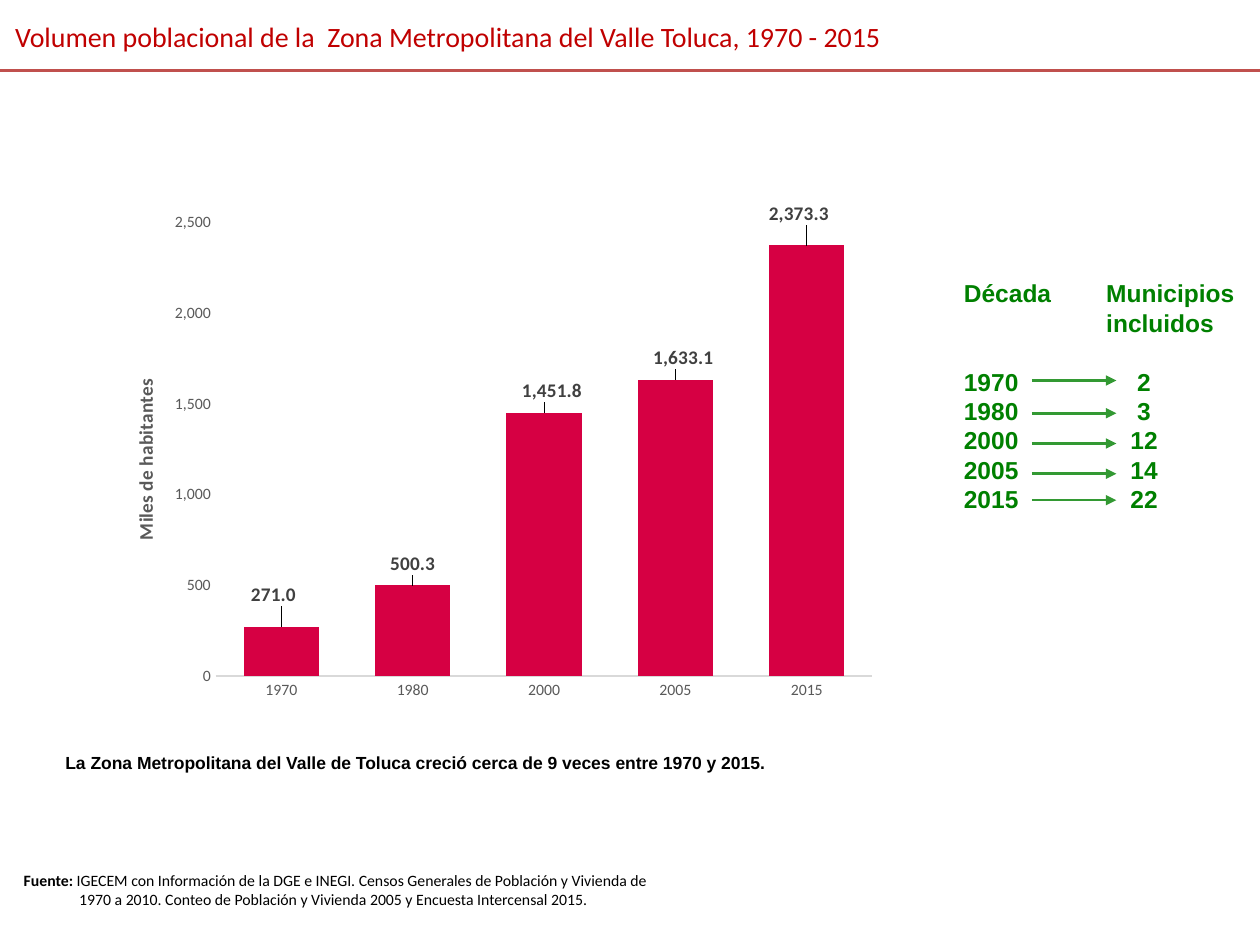
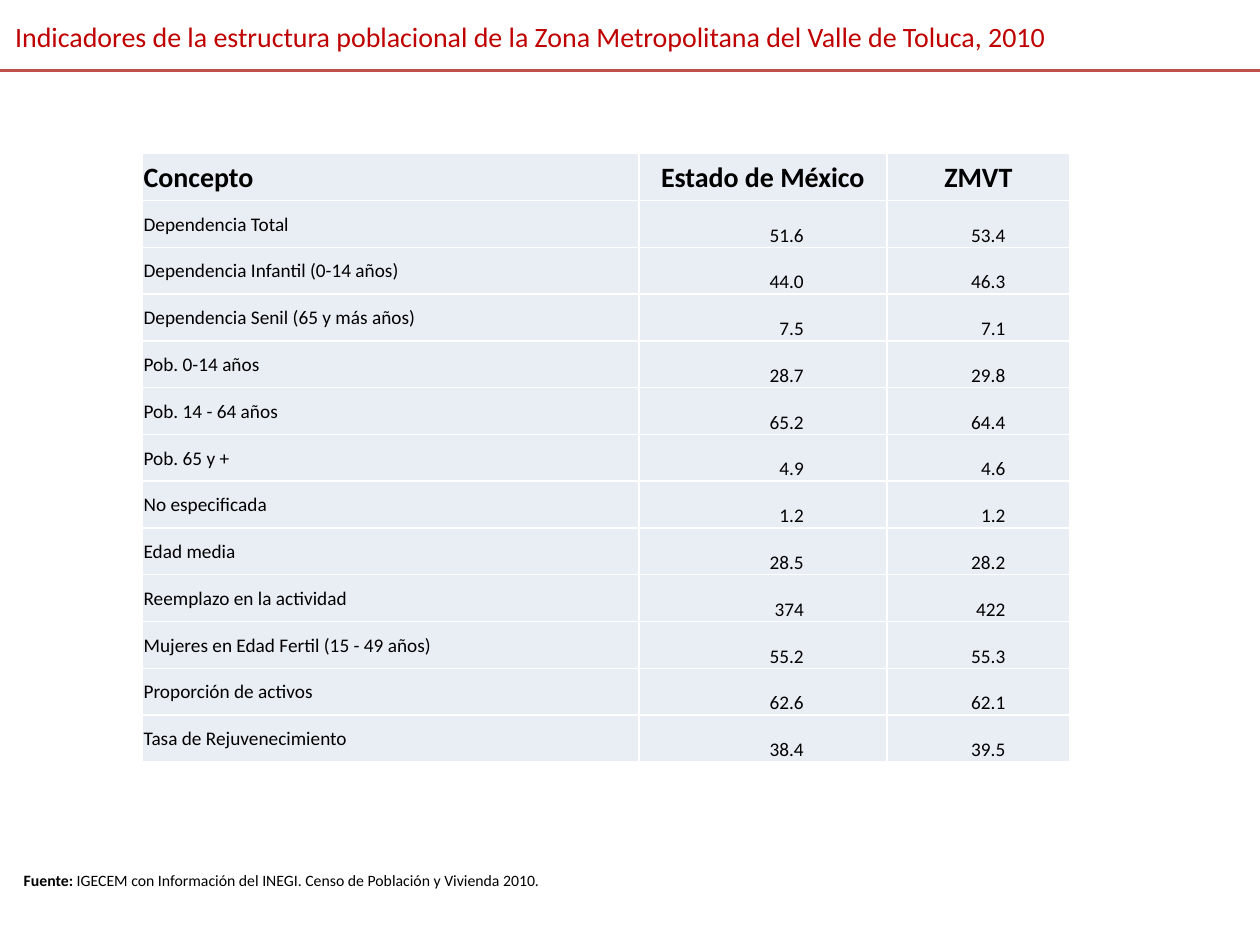
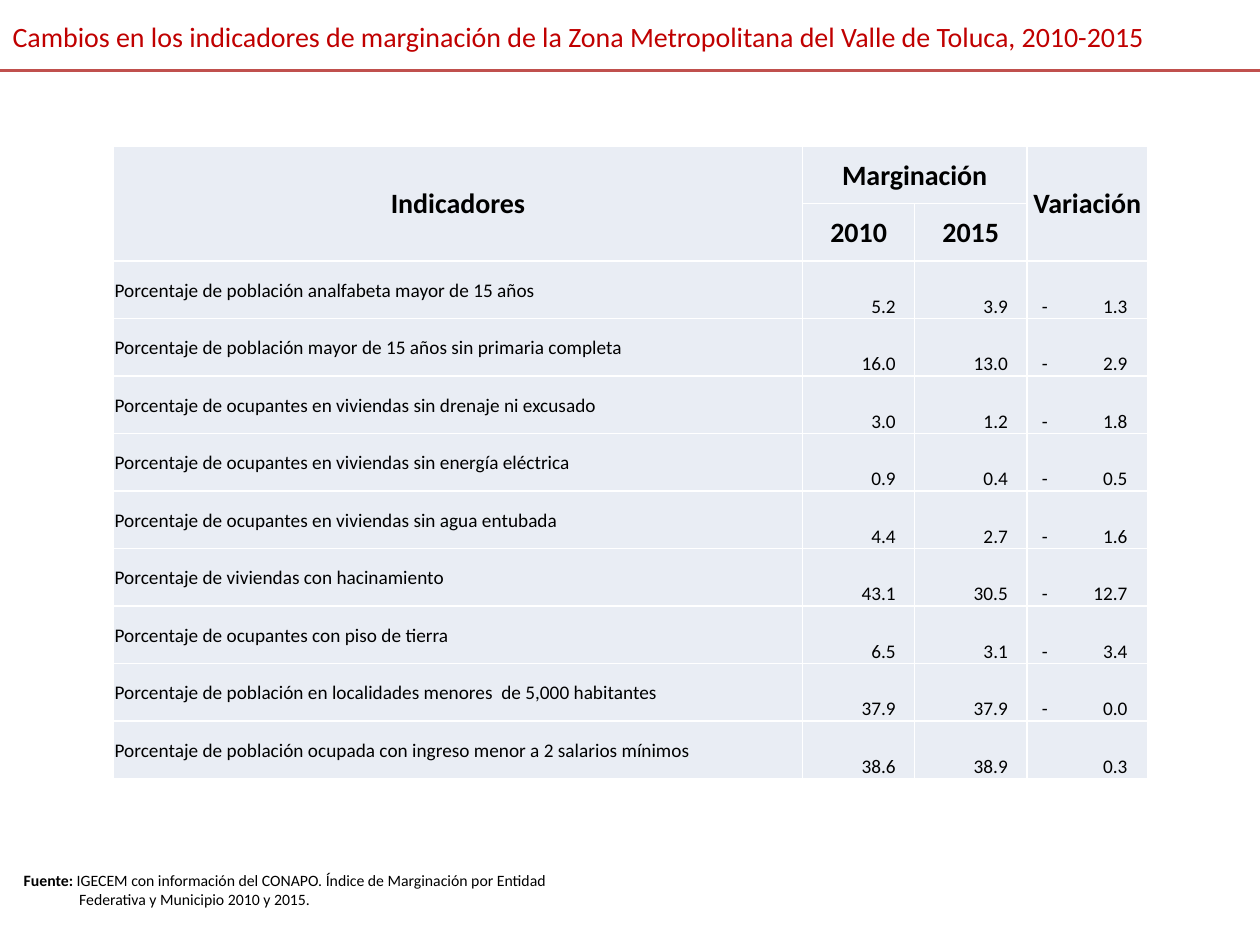
from lxml import etree
from pptx import Presentation
from pptx.chart.data import CategoryChartData
from pptx.dml.color import RGBColor
from pptx.enum.chart import XL_CHART_TYPE, XL_LABEL_POSITION, XL_TICK_MARK
from pptx.enum.shapes import MSO_CONNECTOR
from pptx.enum.text import MSO_ANCHOR, MSO_AUTO_SIZE, PP_ALIGN
from pptx.oxml.ns import qn
from pptx.util import Inches, Pt

COLUMN_CLUSTERED = XL_CHART_TYPE.COLUMN_CLUSTERED
OUTSIDE_END = XL_LABEL_POSITION.OUTSIDE_END
NO_TICK = XL_TICK_MARK.NONE
STRAIGHT = MSO_CONNECTOR.STRAIGHT
TOP, MIDDLE, BOTTOM = MSO_ANCHOR.TOP, MSO_ANCHOR.MIDDLE, MSO_ANCHOR.BOTTOM
NO_AUTOFIT = MSO_AUTO_SIZE.NONE
LEFT, CENTER, RIGHT = PP_ALIGN.LEFT, PP_ALIGN.CENTER, PP_ALIGN.RIGHT

TITLE_RED = RGBColor(0xC0, 0x00, 0x00)
RULE_RED = RGBColor(0xC0, 0x50, 0x4D)
BAR_RED = RGBColor(0xD6, 0x00, 0x43)
LIST_GREEN = RGBColor(0x00, 0x80, 0x00)
ARROW_GREEN = RGBColor(0x33, 0x99, 0x33)
BLACK = RGBColor(0x00, 0x00, 0x00)
LABEL_GRAY = RGBColor(0x40, 0x40, 0x40)
AXIS_GRAY = RGBColor(0x59, 0x59, 0x59)
AXIS_LINE_GRAY = RGBColor(0xD9, 0xD9, 0xD9)
CELL_FILL = RGBColor(0xE9, 0xED, 0xF4)

HEADINGS = [
    # title, title left, source, source width
    ("Volumen poblacional de la  Zona Metropolitana del Valle Toluca, 1970 - 2015", 0.02,
     " IGECEM con Información de la DGE e INEGI. Censos Generales de Población y Vivienda de "
     "1970 a 2010. Conteo de Población y Vivienda 2005 y Encuesta Intercensal 2015.", 5.14),
    ("Indicadores de la estructura poblacional de la Zona Metropolitana del Valle de Toluca, 2010",
     0.02, " IGECEM con Información del INEGI. Censo de Población y Vivienda 2010.", 4.73),
    ("Cambios en los indicadores de marginación de la Zona Metropolitana del Valle de Toluca, "
     "2010-2015", 0,
     " IGECEM con información del CONAPO. Índice de Marginación por Entidad "
     "Federativa y Municipio 2010 y 2015.", 4.73),
]

POPULATION = {"1970": 271.0, "1980": 500.3, "2000": 1451.8, "2005": 1633.1, "2015": 2373.3}
LABEL_SHIFTS = [(-0.01, -0.03), (0, -0.01), (0.01, -0.01), (0.01, -0.01), (-0.01, -0.03)]
ARROW_HEIGHTS = [3.02, 3.28, 3.52, 3.76, 3.97]
MUNICIPALITIES = ["Década\tMunicipios", "\tincluidos",
                  "1970\t2", "1980\t3", "2000\t12", "2005\t14", "2015\t22"]

STRUCTURE_ROWS = [
    ("Concepto", "Estado de México", "ZMVT"),
    ("Dependencia Total", "51.6", "53.4"),
    ("Dependencia Infantil (0-14 años)", "44.0", "46.3"),
    ("Dependencia Senil (65 y más años)", "7.5", "7.1"),
    ("Pob. 0-14 años", "28.7", "29.8"),
    ("Pob. 14 - 64 años", "65.2", "64.4"),
    ("Pob. 65 y +", "4.9", "4.6"),
    ("No especificada", "1.2", "1.2"),
    ("Edad media", "28.5", "28.2"),
    ("Reemplazo en la actividad", "374", "422"),
    ("Mujeres en Edad Fertil (15 - 49 años)", "55.2", "55.3"),
    ("Proporción de activos", "62.6", "62.1"),
    ("Tasa de Rejuvenecimiento", "38.4", "39.5"),
]
MARGINATION_ROWS = [
    ("Indicadores", "Marginación", "", "Variación"),
    ("", "2010", "2015", ""),
    ("Porcentaje de población analfabeta mayor de 15 años", "5.2", "3.9", "-\t1.3"),
    ("Porcentaje de población mayor de 15 años sin primaria completa", "16.0", "13.0", "-\t2.9"),
    ("Porcentaje de ocupantes en viviendas sin drenaje ni excusado", "3.0", "1.2", "-\t1.8"),
    ("Porcentaje de ocupantes en viviendas sin energía eléctrica", "0.9", "0.4", "-\t0.5"),
    ("Porcentaje de ocupantes en viviendas sin agua entubada", "4.4", "2.7", "-\t1.6"),
    ("Porcentaje de viviendas con hacinamiento", "43.1", "30.5", "-\t12.7"),
    ("Porcentaje de ocupantes con piso de tierra", "6.5", "3.1", "-\t3.4"),
    ("Porcentaje de población en localidades menores  de 5,000 habitantes",
     "37.9", "37.9", "-\t0.0"),
    ("Porcentaje de población ocupada con ingreso menor a 2 salarios mínimos",
     "38.6", "38.9", "\t0.3"),
]


def add_line(slide, left, right, height, color):
    """Add a level line without shadow."""
    line = slide.shapes.add_connector(
        STRAIGHT, Inches(left), Inches(height), Inches(right), Inches(height))
    line.line.color.rgb = color
    line.line.width = Pt(1.5)
    etree.SubElement(line._element.spPr, qn("a:effectLst"))
    return line


def set_layout(parent, index, **values):
    """Give a chart part a manual layout."""
    for old_layout in parent.findall(qn("c:layout")):
        parent.remove(old_layout)
    layout = etree.Element(qn("c:layout"))
    manual = etree.SubElement(layout, qn("c:manualLayout"))
    for name, value in values.items():
        etree.SubElement(manual, qn("c:" + name), val=str(value))
    parent.insert(index, layout)


presentation = Presentation()
presentation.slide_width, presentation.slide_height = Inches(10), Inches(7.5)

# Title, rule and source on every slide
for title, title_left, source, source_width in HEADINGS:
    slide = presentation.slides.add_slide(presentation.slide_layouts[5])
    shape = slide.shapes.title
    shape.left, shape.top = Inches(title_left), Inches(0.09)
    shape.width, shape.height = Inches(10 - title_left), Inches(0.38)
    shape.text_frame.text = title
    shape.text_frame.vertical_anchor = TOP
    shape.text_frame.auto_size = NO_AUTOFIT
    paragraph = shape.text_frame.paragraphs[0]
    paragraph.alignment = LEFT
    paragraph.line_spacing = 1.05
    paragraph.font.name, paragraph.font.size = "Calibri", Pt(16)
    paragraph.font.color.rgb = TITLE_RED

    add_line(slide, 0, 10, 0.56, RULE_RED)

    shape = slide.shapes.add_textbox(Inches(0.09), Inches(6.86), Inches(source_width), Inches(0.4))
    shape.text_frame.word_wrap = True
    paragraph = shape.text_frame.paragraphs[0]
    properties = paragraph._p.get_or_add_pPr()
    properties.set("marL", str(Inches(0.44)))
    properties.set("indent", str(-Inches(0.44)))
    paragraph.font.name, paragraph.font.size = "Calibri", Pt(9)
    paragraph.font.color.rgb = BLACK
    for text, bold in (("Fuente:", True), (source, False)):
        run = paragraph.add_run()
        run.text, run.font.bold = text, bold

population_slide, structure_slide, margination_slide = presentation.slides

# Population chart
chart_data = CategoryChartData(number_format="#,##0.0")
chart_data.categories = list(POPULATION)
chart_data.add_series("Series 1", list(POPULATION.values()))
chart = population_slide.shapes.add_chart(
    COLUMN_CLUSTERED, Inches(0.77), Inches(1.6), Inches(6.28), Inches(4.05), chart_data).chart
chart.has_legend = chart.has_title = False
chart.font.name, chart.font.size = "Calibri", Pt(10)
chart.font.color.rgb = BLACK
set_layout(chart._chartSpace.chart.plotArea, 0, layoutTarget="inner", xMode="edge",
           yMode="edge", x=0.15, y=0.04, w=0.83, h=0.89)

for axis in (chart.category_axis, chart.value_axis):
    axis.major_tick_mark = axis.minor_tick_mark = NO_TICK
    axis.has_major_gridlines = False
    axis.tick_labels.font.name, axis.tick_labels.font.size = "Calibri", Pt(9)
    axis.tick_labels.font.color.rgb = AXIS_GRAY
chart.category_axis.format.line.color.rgb = AXIS_LINE_GRAY
chart.category_axis.format.line.width = Pt(0.75)
value_axis = chart.value_axis
value_axis.format.line.fill.background()
value_axis.minimum_scale, value_axis.maximum_scale, value_axis.major_unit = 0, 2500, 500
value_axis.tick_labels.number_format = "#,##0"
value_axis.tick_labels.number_format_is_linked = False
axis_title = value_axis.axis_title
axis_title.text_frame.text = "Miles de habitantes"
font = axis_title.text_frame.paragraphs[0].font
font.name, font.size, font.bold = "Calibri", Pt(11), True
font.color.rgb = AXIS_GRAY
set_layout(axis_title._element, 1, xMode="edge", yMode="edge", x=0.04, y=0.34)

plot = chart.plots[0]
plot.gap_width = 75
plot.vary_by_categories = False
series = plot.series[0]
series.format.fill.solid()
series.format.fill.fore_color.rgb = BAR_RED
series.data_labels.show_value = True
series.data_labels.number_format = "#,##0.0"
series.data_labels.number_format_is_linked = False
for index in range(len(POPULATION)):
    label = series.points[index].data_label
    label.position = OUTSIDE_END
    label.font.name, label.font.size, label.font.bold = "Calibri", Pt(11), True
    label.font.color.rgb = LABEL_GRAY
for label_element, (x, y) in zip(series._element.iter(qn("c:dLbl")), LABEL_SHIFTS):
    set_layout(label_element, 1, x=x, y=y)

# Growth remark
shape = population_slide.shapes.add_textbox(Inches(0.42), Inches(5.92), Inches(8.75), Inches(0.27))
shape.text_frame.word_wrap = True
paragraph = shape.text_frame.paragraphs[0]
paragraph.text = "La Zona Metropolitana del Valle de Toluca creció cerca de 9 veces entre 1970 y 2015."
paragraph.font.name, paragraph.font.size, paragraph.font.bold = "Arial", Pt(10), True
paragraph.font.color.rgb = BLACK

# Municipalities by decade
shape = population_slide.shapes.add_textbox(Inches(7.05), Inches(2.16), Inches(2.86), Inches(1.99))
text_frame = shape.text_frame
text_frame.word_wrap = True
text_frame.margin_left, text_frame.margin_right = Inches(0.6), 0
text_frame.text = "\n".join(MUNICIPALITIES)
for index, paragraph in enumerate(text_frame.paragraphs):
    position, alignment = (1.13, "l") if index < 2 else (1.43, "ctr")
    tabs = etree.SubElement(paragraph._p.get_or_add_pPr(), qn("a:tabLst"))
    etree.SubElement(tabs, qn("a:tab"), pos=str(Inches(position)), algn=alignment)
    paragraph.line_spacing = Pt(16.8)
    paragraph.space_before = Pt(16.8 if index == 2 else 0)
    paragraph.font.name, paragraph.font.size, paragraph.font.bold = "Arial", Pt(14), True
    paragraph.font.color.rgb = LIST_GREEN
for height in ARROW_HEIGHTS:
    arrow = add_line(population_slide, 8.19, 8.86, height, ARROW_GREEN)
    etree.SubElement(arrow.line._get_or_add_ln(), qn("a:tailEnd"), type="triangle")

# Tables: slide, rows, header rows, left, top, height, column widths, right margins of numbers
TABLES = [
    (structure_slide, STRUCTURE_ROWS, 1, 1.13, 1.22, 4.83, [3.94, 1.97, 1.45], [0.01, 0.66, 0.51]),
    (margination_slide, MARGINATION_ROWS, 2, 0.9, 1.16, 5.02, [5.47, 0.89, 0.89, 0.96],
     [0.01, 0.15, 0.15, 0.01]),
]
for slide, rows, header_rows, left, top, height, widths, right_margins in TABLES:
    table = slide.shapes.add_table(len(rows), len(widths), Inches(left), Inches(top),
                                   Inches(sum(widths)), Inches(height)).table
    table.first_row = table.horz_banding = False
    for column, width in zip(table.columns, widths):
        column.width = Inches(width)
    for row_index, row in enumerate(rows):
        is_header = row_index < header_rows
        for column_index, text in enumerate(row):
            cell = table.cell(row_index, column_index)
            is_number = column_index > 0 and not is_header
            has_sign_column = "\t" in text
            cell.fill.solid()
            cell.fill.fore_color.rgb = CELL_FILL
            cell.margin_left = Inches(0.12 if has_sign_column else 0.01)
            cell.margin_right = Inches(right_margins[column_index] if is_number else 0.01)
            cell.margin_top, cell.margin_bottom = Inches(0.01), 0
            cell.vertical_anchor = BOTTOM if is_number else MIDDLE
            cell.text = text
            paragraph = cell.text_frame.paragraphs[0]
            if has_sign_column:
                tabs = etree.SubElement(paragraph._p.get_or_add_pPr(), qn("a:tabLst"))
                etree.SubElement(tabs, qn("a:tab"), pos=str(Inches(0.68)), algn="r")
            elif is_number:
                paragraph.alignment = RIGHT
            elif is_header and text != "Concepto":
                paragraph.alignment = CENTER
            paragraph.font.name, paragraph.font.bold = "Calibri", is_header
            paragraph.font.size = Pt(16 if is_header else 11)
            paragraph.font.color.rgb = BLACK

# Merged headers of the margination table, the last one built
for first, last in (((0, 0), (1, 0)), ((0, 1), (0, 2)), ((0, 3), (1, 3))):
    table.cell(*first).merge(table.cell(*last))

presentation.save("out.pptx")
